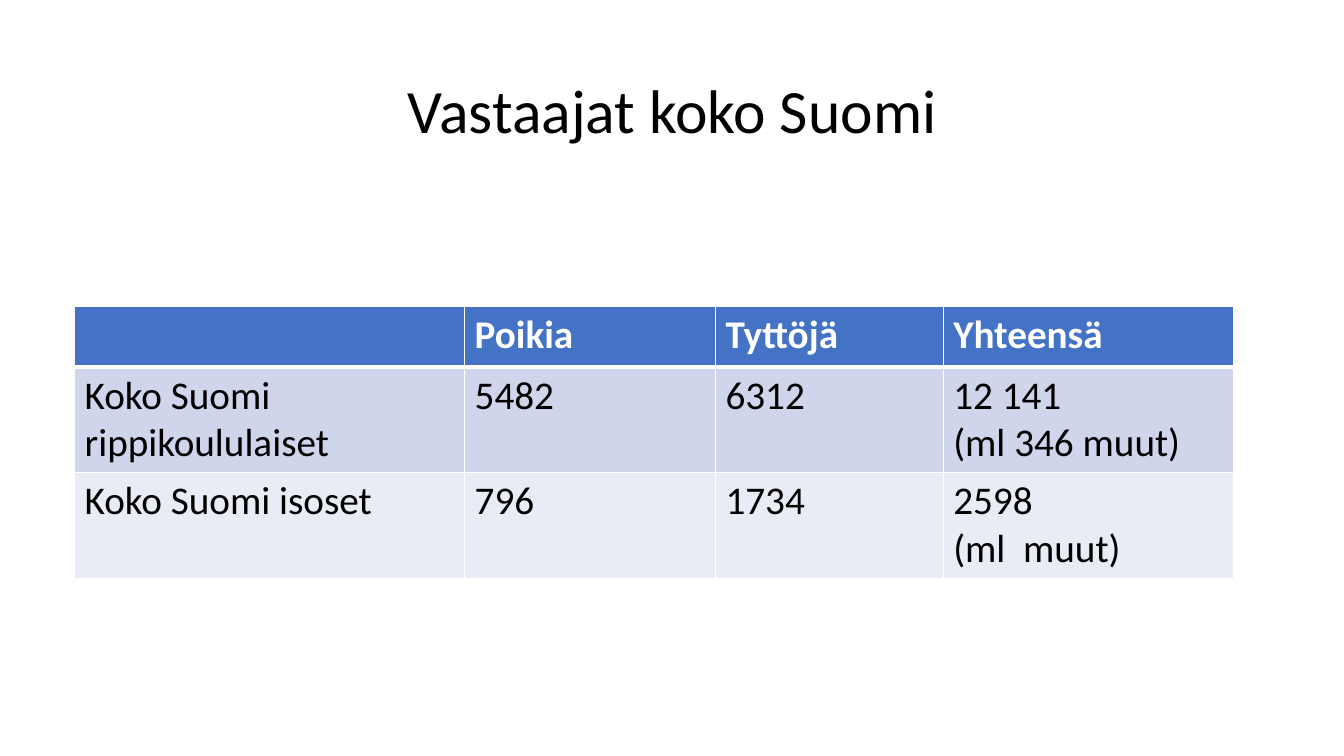
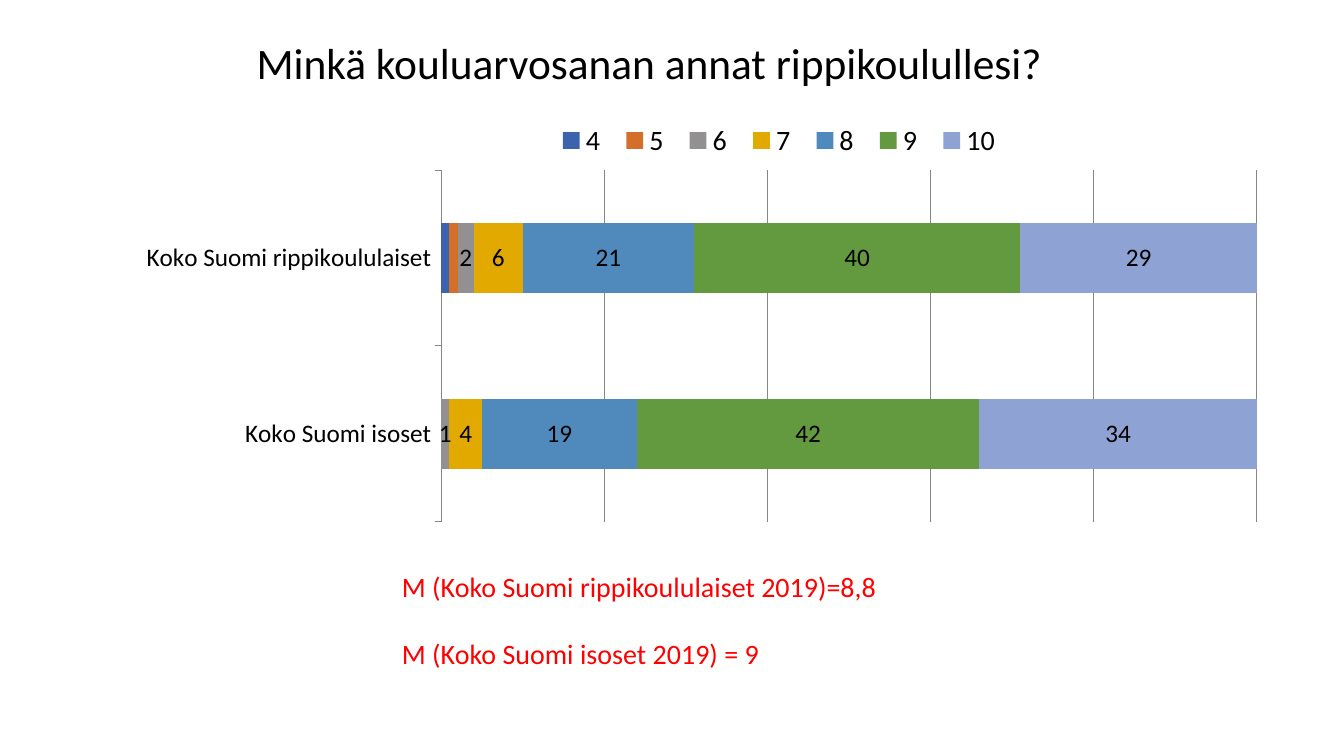
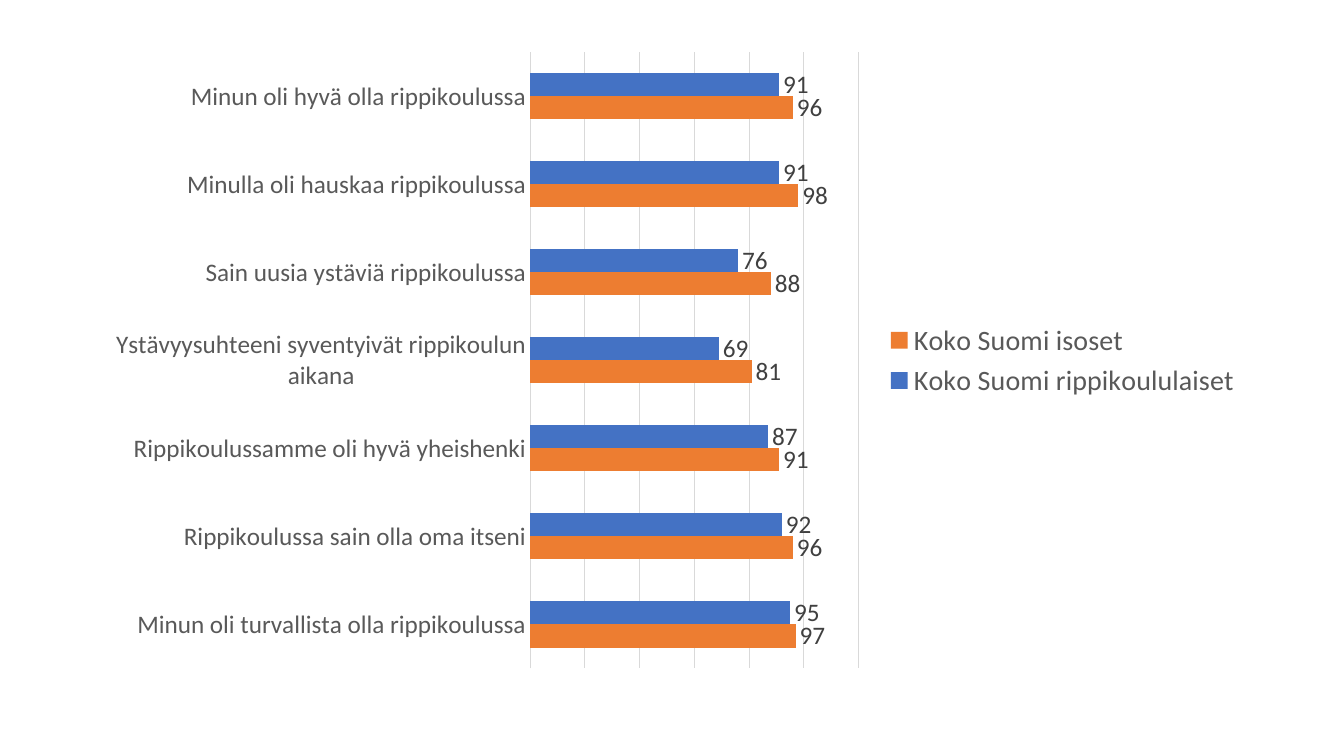
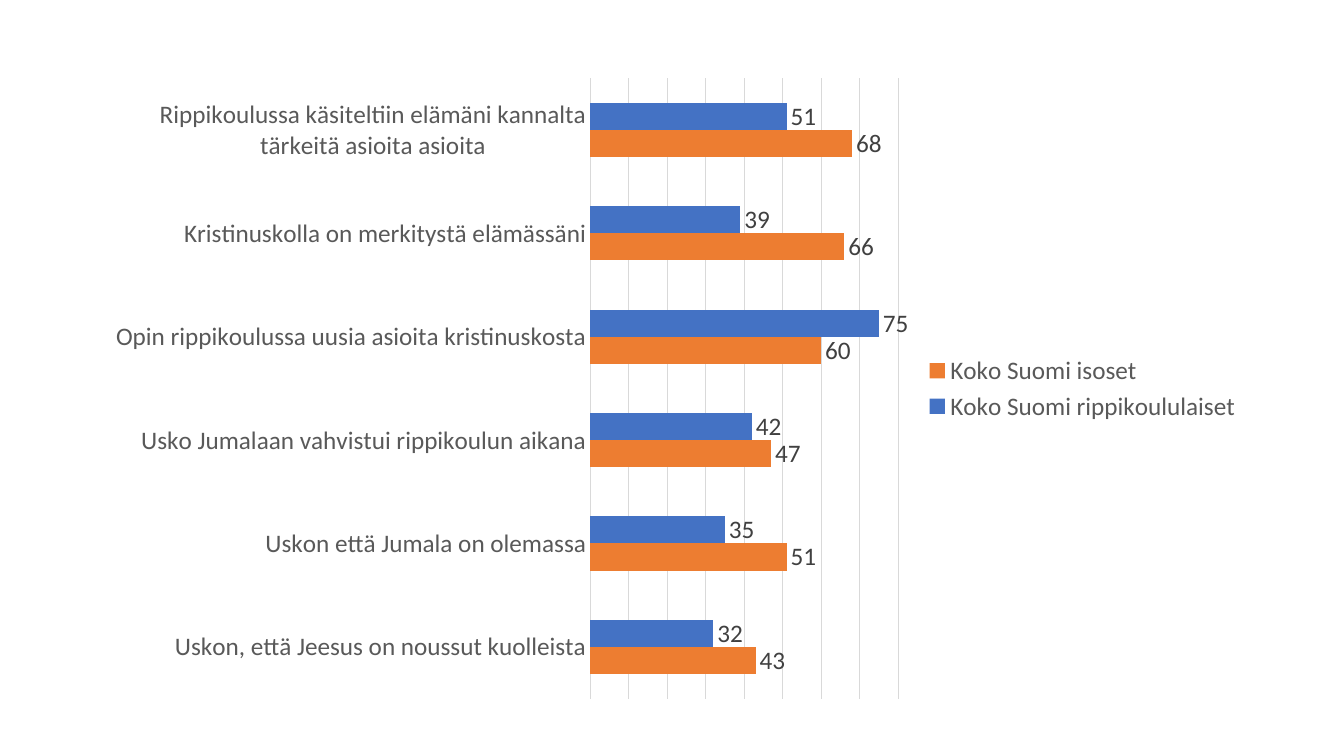
from dataclasses import dataclass
from typing import Optional

from lxml import etree
from pptx import Presentation
from pptx.chart.data import CategoryChartData
from pptx.dml.color import RGBColor
from pptx.enum.chart import XL_CHART_TYPE, XL_LABEL_POSITION, XL_LEGEND_POSITION, XL_TICK_MARK
from pptx.enum.text import MSO_ANCHOR, PP_ALIGN
from pptx.oxml.ns import qn
from pptx.util import Cm, Pt

LEFT, CENTER = PP_ALIGN.LEFT, PP_ALIGN.CENTER
TOP, MIDDLE = MSO_ANCHOR.TOP, MSO_ANCHOR.MIDDLE
STACKED, GROUPED = XL_CHART_TYPE.BAR_STACKED_100, XL_CHART_TYPE.BAR_CLUSTERED
ABOVE, ASIDE = XL_LEGEND_POSITION.TOP, XL_LEGEND_POSITION.RIGHT
NO_TICK, OUT_TICK = XL_TICK_MARK.NONE, XL_TICK_MARK.OUTSIDE
BAR_END = XL_LABEL_POSITION.OUTSIDE_END


@dataclass(frozen=True)
class Theme:
    font: str = "Calibri"
    black: str = "000000"
    white: str = "FFFFFF"
    red: str = "FF0000"
    blue: str = "4472C4"
    orange: str = "ED7D31"
    bands: tuple = ("CFD5EA", "E9EBF5")
    grades: tuple = ("3C64AE", "D46F2B", "929090", "E2AA00", "508ABD", "639A3F", "8FA2D4")
    axis: str = "595959"
    label: str = "404040"
    grid: str = "D9D9D9"
    rule: str = "868686"
    title: int = 44
    ask: int = 31
    cell: int = 28
    note: int = 20
    small: int = 18


THEME = Theme()


@dataclass(frozen=True)
class Box:
    x: float
    y: float
    w: float
    h: float

    def place(self) -> tuple:
        return Cm(self.x), Cm(self.y), Cm(self.w), Cm(self.h)


@dataclass(frozen=True)
class Series:
    name: str
    vals: tuple
    color: str
    shown: bool = True


@dataclass(frozen=True)
class Graph:
    box: Box
    kind: int
    cats: tuple
    series: tuple
    top: float
    step: float
    gap: int = 182
    side: int = ASIDE
    key: int = THEME.note
    ink: str = THEME.axis
    tag: str = THEME.label
    line: str = THEME.grid
    tick: int = NO_TICK
    plot: Optional[Box] = None
    frame: Optional[Box] = None


def style(font, size: int, color: str, bold: bool = False) -> None:
    font.name, font.size, font.bold = THEME.font, Pt(size), bold
    font.color.rgb = RGBColor.from_string(color)


def write(frame, lines: tuple, size: int, color: str, bold: bool = False,
          align: int = LEFT, space: float = 0, lead: float = 1.0) -> None:
    frame.word_wrap = True
    for i, line in enumerate(lines):
        para = frame.paragraphs[0] if i == 0 else frame.add_paragraph()
        para.alignment, para.line_spacing = align, lead
        para.space_before = Pt(space if i else 0)
        run = para.add_run()
        run.text = line
        style(run.font, size, color, bold)


def add_text(slide, box: Box, lines: tuple, size: int, color: str = THEME.black,
             anchor: int = MIDDLE, **form) -> None:
    frame = slide.shapes.add_textbox(*box.place()).text_frame
    frame.vertical_anchor = anchor
    write(frame, lines, size, color, **form)


def edge(cell, head: bool, under: bool) -> None:
    props = cell._tc.get_or_add_tcPr()
    widths = {"L": 1, "R": 1, "T": 3 if under else 1, "B": 3 if head else 1}
    for i, (side, width) in enumerate(widths.items()):
        line = etree.Element(qn(f"a:ln{side}"), w=str(Pt(width)))
        fill = etree.SubElement(line, qn("a:solidFill"))
        etree.SubElement(fill, qn("a:srgbClr"), val=THEME.white)
        props.insert(i, line)


def add_grid(slide, box: Box, wide: tuple, high: tuple, rows: tuple) -> None:
    table = slide.shapes.add_table(len(rows), len(wide), *box.place()).table
    for col, width in zip(table.columns, wide):
        col.width = Cm(width)
    for r, (row, height) in enumerate(zip(rows, high)):
        table.rows[r].height = Cm(height)
        head = r == 0
        color = THEME.blue if head else THEME.bands[(r - 1) % 2]
        for c, text in enumerate(row):
            cell = table.cell(r, c)
            cell.fill.solid()
            cell.fill.fore_color.rgb = RGBColor.from_string(color)
            edge(cell, head, r == 1)
            if text:
                write(cell.text_frame, text.split("\n"), THEME.cell,
                      THEME.white if head else THEME.black, head)


def lay_out(parent, index: int, box: Box, inner: bool = False) -> None:
    for old in parent.findall(qn("c:layout")):
        parent.remove(old)
    layout = etree.Element(qn("c:layout"))
    manual = etree.SubElement(layout, qn("c:manualLayout"))
    parts = [("layoutTarget", "inner")] if inner else []
    parts += [("xMode", "edge"), ("yMode", "edge"),
              ("x", box.x), ("y", box.y), ("w", box.w), ("h", box.h)]
    for name, val in parts:
        etree.SubElement(manual, qn(f"c:{name}"), val=str(val))
    parent.insert(index, layout)


def stroke(line, color: str) -> None:
    line.width = Pt(0.75)
    line.color.rgb = RGBColor.from_string(color)


def add_graph(slide, graph: Graph) -> None:
    data = CategoryChartData()
    data.categories = graph.cats
    for item in graph.series:
        data.add_series(item.name, item.vals)
    chart = slide.shapes.add_chart(graph.kind, *graph.box.place(), data).chart
    chart.has_title = False
    style(chart.font, THEME.small, graph.ink)

    chart.has_legend = True
    chart.legend.position = graph.side
    chart.legend.include_in_layout = False
    style(chart.legend.font, graph.key, graph.ink)

    names, scale = chart.category_axis, chart.value_axis
    names.reverse_order = True
    names.major_tick_mark, names.minor_tick_mark = graph.tick, NO_TICK
    style(names.tick_labels.font, THEME.small, graph.ink)
    stroke(names.format.line, graph.line)
    scale.minimum_scale, scale.maximum_scale = 0, graph.top
    scale.major_unit = graph.step
    scale.has_major_gridlines = True
    stroke(scale.major_gridlines.format.line, graph.line)
    scale.visible = False

    plot = chart.plots[0]
    plot.vary_by_categories = False
    plot.gap_width = graph.gap
    plot.overlap = 100 if graph.kind == STACKED else 0
    for bar, item in zip(plot.series, graph.series):
        bar.format.fill.solid()
        bar.format.fill.fore_color.rgb = RGBColor.from_string(item.color)
        if item.shown:
            labels = bar.data_labels
            labels.show_value = True
            style(labels.font, THEME.small, graph.tag)
            if graph.kind == GROUPED:
                labels.position = BAR_END

    root = chart.element.find(qn("c:chart"))
    if graph.plot:
        lay_out(root.find(qn("c:plotArea")), 0, graph.plot, True)
    if graph.frame:
        lay_out(root.find(qn("c:legend")), 1, graph.frame)


YOUTH, GUIDES = "Koko Suomi rippikoululaiset", "Koko Suomi isoset"


def pair(youth: tuple, guides: tuple) -> tuple:
    return Series(YOUTH, youth, THEME.blue), Series(GUIDES, guides, THEME.orange)


COUNTS = (
    ("", "Poikia", "Tyttöjä", "Yhteensä"),
    (YOUTH, "5482", "6312", "12 141\n(ml 346 muut)"),
    (GUIDES, "796", "1734", "2598\n(ml  muut)"),
)
SHARES = ((1, 0), (1, 0), (2, 1), (6, 4), (21, 19), (40, 42), (29, 34))
GRADES = Graph(
    Box(2.9, 2.69, 29.36, 10.67), STACKED, (YOUTH, GUIDES),
    tuple(Series(str(mark), vals, color, mark > 5)
          for mark, vals, color in zip(range(4, 11), SHARES, THEME.grades)),
    top=1, step=0.2, gap=150, side=ABOVE, ink=THEME.black, tag=THEME.black,
    line=THEME.rule, tick=OUT_TICK,
    plot=Box(0.28, 0.15, 0.7, 0.83), frame=Box(0.37, 0.03, 0.4, 0.1))
SPIRIT = Graph(
    Box(2.34, 0.99, 29.21, 16.18), GROUPED,
    ("Minun oli hyvä olla rippikoulussa",
     "Minulla oli hauskaa rippikoulussa",
     "Sain uusia ystäviä rippikoulussa",
     "Ystävyysuhteeni syventyivät rippikoulun aikana",
     "Rippikoulussamme oli hyvä yheishenki",
     "Rippikoulussa sain olla oma itseni",
     "Minun oli turvallista olla rippikoulussa"),
    pair((91, 91, 76, 69, 87, 92, 95), (96, 98, 88, 81, 91, 96, 97)),
    top=120, step=20)
FAITH = Graph(
    Box(2.34, 1.65, 29.21, 16.28), GROUPED,
    ("Rippikoulussa käsiteltiin elämäni kannalta tärkeitä asioita asioita",
     "Kristinuskolla on merkitystä elämässäni",
     "Opin rippikoulussa uusia asioita kristinuskosta",
     "Usko Jumalaan vahvistui rippikoulun aikana",
     "Uskon että Jumala on olemassa",
     "Uskon, että Jeesus on noussut kuolleista"),
    pair((51, 39, 75, 42, 35, 32), (68, 66, 60, 47, 51, 43)),
    top=80, step=10, key=THEME.small)


def main() -> None:
    deck = Presentation()
    deck.slide_width, deck.slide_height = Cm(33.87), Cm(19.05)
    count, grade, spirit, faith = (
        deck.slides.add_slide(deck.slide_layouts[6]) for _ in range(4))

    add_text(count, Box(2.34, 1.02, 29.21, 3.68), ("Vastaajat koko Suomi",),
             THEME.title, align=CENTER, lead=0.9)
    add_grid(count, Box(1.88, 7.72, 29.21, 6.86), (9.83, 6.32, 5.74, 7.32),
             (1.52, 2.67, 2.67), COUNTS)

    add_text(grade, Box(6.22, 0.76, 22.15, 1.78),
             ("Minkä kouluarvosanan annat rippikoulullesi?",), THEME.ask, lead=0.9)
    add_graph(grade, GRADES)
    add_text(grade, Box(9.88, 14.22, 22, 3.68),
             ("M (Koko Suomi rippikoululaiset 2019)=8,8", "M (Koko Suomi isoset 2019) = 9"),
             THEME.note, THEME.red, TOP, space=24)

    add_graph(spirit, SPIRIT)
    add_graph(faith, FAITH)
    deck.save("out.pptx")


if __name__ == "__main__":
    main()
